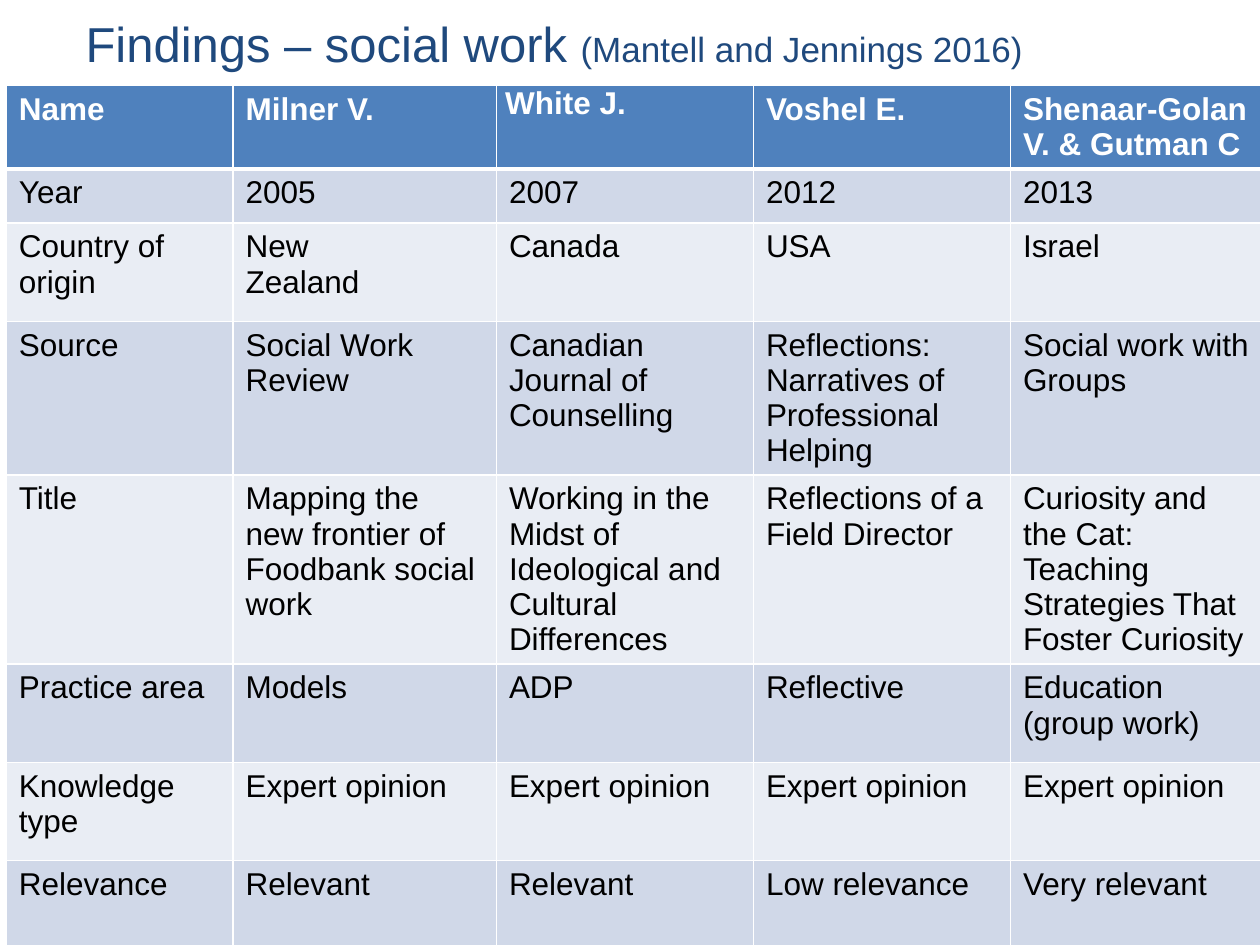
from lxml import etree
from pptx import Presentation
from pptx.dml.color import RGBColor
from pptx.enum.text import MSO_ANCHOR, PP_ALIGN
from pptx.oxml.ns import qn
from pptx.util import Inches, Pt

LEFT = PP_ALIGN.LEFT
JUSTIFY = PP_ALIGN.JUSTIFY
MIDDLE = MSO_ANCHOR.MIDDLE

THEME = {
    "font": "Arial",
    "title": "1F497D",
    "header": "4F81BD",
    "header_text": "FFFFFF",
    "bands": ("D0D8E8", "E9EDF4"),
    "text": "000000",
    "border": "FFFFFF",
    "title_size": 28,
    "citation_size": 20,
    "table_size": 18,
}

COLUMN_WIDTHS = (1.8, 2.09, 2.04, 2.04, 2.04)
ROW_HEIGHTS = (0.61, 0.43, 0.78, 1.13, 1.39, 0.78, 0.78, 0.78)
FINDINGS = (
    ("Name", "Milner V.", "White J.", "Voshel E.", "Shenaar-Golan V. & Gutman C"),
    ("Year", "2005", "2007", "2012", "2013"),
    ("Country of origin", "New\nZealand", "Canada", "USA", "Israel"),
    ("Source", "Social Work Review", "Canadian Journal of Counselling",
     "Reflections: Narratives of Professional Helping", "Social work with Groups"),
    ("Title", "Mapping the new frontier of Foodbank social work",
     "Working in the Midst of Ideological and Cultural Differences",
     "Reflections of a Field Director",
     "Curiosity and the Cat: Teaching Strategies That Foster Curiosity"),
    ("Practice area", "Models", "ADP", "Reflective", "Education (group work)"),
    ("Knowledge type",) + ("Expert opinion",) * 4,
    ("Relevance", "Relevant", "Relevant", "Low relevance", "Very relevant"),
)


def add_text(paragraph, text, *, size, color, bold=False, align=LEFT):
    paragraph.alignment = align
    run = paragraph.add_run()
    run.text = text
    run.font.name = THEME["font"]
    run.font.size = Pt(size)
    run.font.bold = bold
    run.font.color.rgb = RGBColor.from_string(color)


def set_borders(cell, widths):
    properties = cell._tc.get_or_add_tcPr()
    for side, width in widths.items():
        line = etree.SubElement(properties, qn(f"a:{side}"), w=str(Pt(width)))
        fill = etree.SubElement(line, qn("a:solidFill"))
        etree.SubElement(fill, qn("a:srgbClr"), val=THEME["border"])


presentation = Presentation()
presentation.slide_width = Inches(10)
presentation.slide_height = Inches(7.5)
slide = presentation.slides.add_slide(presentation.slide_layouts[6])

table = slide.shapes.add_table(
    len(ROW_HEIGHTS), len(COLUMN_WIDTHS),
    Inches(0.05), Inches(0.68), Inches(sum(COLUMN_WIDTHS)), Inches(sum(ROW_HEIGHTS)),
).table
for column, width in zip(table.columns, COLUMN_WIDTHS):
    column.width = Inches(width)
for row, height in zip(table.rows, ROW_HEIGHTS):
    row.height = Inches(height)

for row_index, values in enumerate(FINDINGS):
    is_header = row_index == 0
    fill_color = THEME["header"] if is_header else THEME["bands"][(row_index - 1) % 2]
    text_color = THEME["header_text"] if is_header else THEME["text"]
    borders = {"lnL": 1, "lnR": 1, "lnT": 3 if row_index == 1 else 1, "lnB": 3 if is_header else 1}
    for column_index, value in enumerate(values):
        cell = table.cell(row_index, column_index)
        set_borders(cell, borders)
        cell.fill.solid()
        cell.fill.fore_color.rgb = RGBColor.from_string(fill_color)
        is_tight = value == "White J."
        if is_tight:
            cell.margin_left = cell.margin_right = Inches(0.07)
            cell.margin_top = cell.margin_bottom = Inches(0)
        for line_index, line in enumerate(value.split("\n")):
            frame = cell.text_frame
            paragraph = frame.add_paragraph() if line_index else frame.paragraphs[0]
            add_text(paragraph, line, size=THEME["table_size"], color=text_color,
                     bold=is_header, align=JUSTIFY if is_tight else LEFT)

title = slide.shapes.add_textbox(Inches(0.55), Inches(0), Inches(9), Inches(0.68))
title_frame = title.text_frame
title_frame.word_wrap = True
title_frame.vertical_anchor = MIDDLE
title_frame.margin_left = title_frame.margin_right = Inches(0.13)
title_frame.margin_top = title_frame.margin_bottom = Inches(0.07)
title_paragraph = title_frame.paragraphs[0]
add_text(title_paragraph, "Findings – social work ", size=THEME["title_size"], color=THEME["title"])
add_text(title_paragraph, "(Mantell and Jennings 2016)", size=THEME["citation_size"], color=THEME["title"])

presentation.save("out.pptx")
